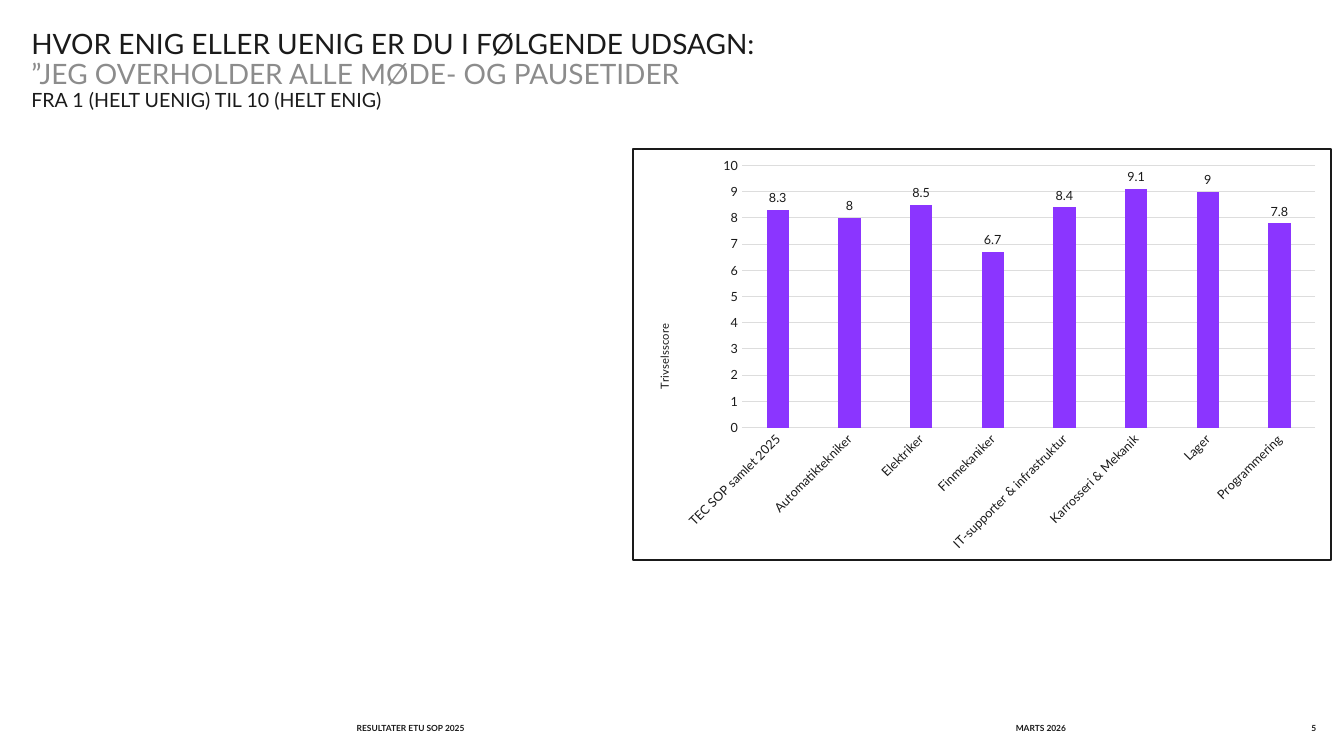
from lxml.etree import fromstring
from pptx import Presentation
from pptx.chart.data import CategoryChartData
from pptx.dml.color import RGBColor
from pptx.enum.chart import XL_CHART_TYPE, XL_LABEL_POSITION, XL_TICK_MARK
from pptx.enum.text import MSO_ANCHOR, MSO_AUTO_SIZE, PP_ALIGN
from pptx.util import Cm, Pt

CHART_NS = "http://schemas.openxmlformats.org/drawingml/2006/chart"
DRAWING_NS = "http://schemas.openxmlformats.org/drawingml/2006/main"
INK, GREY, GRID, PURPLE, WHITE = "1A1A1A", "8C8C8C", "DDDDDD", "8B35FF", "FFFFFF"

HEADING = [
    ("HVOR ENIG ELLER UENIG ER DU I FØLGENDE UDSAGN:", 20, INK),
    ("”JEG OVERHOLDER ALLE MØDE- OG PAUSETIDER", 20, GREY),
    ("FRA 1 (HELT UENIG) TIL 10 (HELT ENIG)", 14, INK),
]
SCORES = {
    "TEC SOP samlet 2025": 8.3,
    "Automatiktekniker": 8,
    "Elektriker": 8.5,
    "Finmekaniker": 6.7,
    "IT-supporter & infrastruktur": 8.4,
    "Karrosseri & Mekanik": 9.1,
    "Lager": 9,
    "Programmering": 7.8,
}
# Text, left, width, alignment
FOOTER = [
    ("RESULTATER ETU SOP 2025", 8.99, 11.2, PP_ALIGN.LEFT),
    ("MARTS 2026", 25.6, 3.78, PP_ALIGN.LEFT),
    ("5", 31.39, 1.78, PP_ALIGN.RIGHT),
]


def colour(code):
    return RGBColor.from_string(code)


def place(element, x, y, size="", inner=""):
    """Give a chart part a manual layout, as shares of the chart."""
    for old in element.xpath("c:layout"):
        element.remove(old)
    layout = fromstring(
        f'<c:layout xmlns:c="{CHART_NS}"><c:manualLayout>{inner}'
        f'<c:xMode val="edge"/><c:yMode val="edge"/>'
        f'<c:x val="{x}"/><c:y val="{y}"/>{size}</c:manualLayout></c:layout>')
    element.insert(len(element.xpath("c:tx")), layout)


class SlideBuilder:
    font = "Lato"

    def __init__(self, slide):
        self.slide = slide

    def style(self, font, size, code=INK, bold=False):
        values = {"name": self.font, "size": Pt(size), "bold": bold}
        for name, value in values.items():
            setattr(font, name, value)
        font.color.rgb = colour(code)

    def frame(self, shape, anchor):
        values = {"margin_left": 0, "margin_top": 0, "margin_right": 0,
                  "margin_bottom": 0, "word_wrap": True,
                  "auto_size": MSO_AUTO_SIZE.NONE, "vertical_anchor": anchor}
        for name, value in values.items():
            setattr(shape.text_frame, name, value)
        return shape.text_frame

    def heading(self, lines, left, top, width, height):
        title = self.slide.shapes.title
        box = {"left": left, "top": top, "width": width, "height": height}
        for name, value in box.items():
            setattr(title, name, Cm(value))
        frame = self.frame(title, MSO_ANCHOR.TOP)
        frame.text = "\n".join(text for text, _, _ in lines)
        for paragraph, (_, size, code) in zip(frame.paragraphs, lines):
            paragraph.alignment = PP_ALIGN.LEFT
            paragraph.line_spacing = 0.9
            paragraph.space_before = Pt(0)
            self.style(paragraph.runs[0].font, size, code)

    def footer(self, text, left, width, alignment):
        box = self.slide.shapes.add_textbox(Cm(left), Cm(18.16), Cm(width), Cm(0.38))
        paragraph = self.frame(box, MSO_ANCHOR.MIDDLE).paragraphs[0]
        paragraph.alignment = alignment
        run = paragraph.add_run()
        run.text = text
        self.style(run.font, 6, bold=True)

    def columns(self, scores, left, top, width, height):
        data = CategoryChartData()
        data.categories = list(scores)
        data.add_series("Series 1", list(scores.values()))
        chart = self.slide.shapes.add_chart(
            XL_CHART_TYPE.COLUMN_CLUSTERED, Cm(left), Cm(top),
            Cm(width), Cm(height), data).chart
        chart.has_title = chart.has_legend = False
        self.style(chart.font, 10)

        # Columns and their labels
        plot = chart.plots[0]
        labels_shown = {"vary_by_categories": False, "gap_width": 219,
                        "overlap": -27, "has_data_labels": True}
        for name, value in labels_shown.items():
            setattr(plot, name, value)
        plot.data_labels.show_value = True
        plot.data_labels.position = XL_LABEL_POSITION.OUTSIDE_END
        self.style(plot.data_labels.font, 9)
        fill = plot.series[0].format.fill
        fill.solid()
        fill.fore_color.rgb = colour(PURPLE)

        # Axes
        groups, score = chart.category_axis, chart.value_axis
        for axis in (groups, score):
            axis.major_tick_mark = axis.minor_tick_mark = XL_TICK_MARK.NONE
            self.style(axis.tick_labels.font, 9)
        scale = {"minimum_scale": 0, "maximum_scale": 10, "major_unit": 1}
        for name, value in scale.items():
            setattr(score, name, value)
        score.format.line.fill.background()
        for line in (groups.format.line, score.major_gridlines.format.line):
            line.color.rgb = colour(GRID)
            line.width = Pt(0.75)
        title = score.axis_title.text_frame
        title.text = "Trivselsscore"
        self.style(title.paragraphs[0].runs[0].font, 8)

        # Turned texts, plot position and chart border
        root = chart.element
        turns = {"//c:catAx/c:txPr/a:bodyPr": -45, "//c:valAx/c:title//a:bodyPr": -90}
        for query, degrees in turns.items():
            body = root.xpath(query)[0]
            body.set("rot", str(degrees * 60000))
            body.set("vert", "horz")
        place(root.xpath("//c:valAx/c:title")[0], 0.03, 0.42)
        place(root.xpath("//c:plotArea")[0], 0.156, 0.04,
              '<c:w val="0.822"/><c:h val="0.638"/>',
              '<c:layoutTarget val="inner"/>')
        root.xpath("c:chart")[0].addnext(fromstring(
            f'<c:spPr xmlns:c="{CHART_NS}" xmlns:a="{DRAWING_NS}">'
            f'<a:solidFill><a:srgbClr val="{WHITE}"/></a:solidFill>'
            f'<a:ln w="{Pt(1.5)}"><a:solidFill><a:srgbClr val="{INK}"/>'
            f'</a:solidFill></a:ln></c:spPr>'))


def main():
    deck = Presentation()
    deck.slide_width, deck.slide_height = Cm(33.87), Cm(19.05)
    builder = SlideBuilder(deck.slides.add_slide(deck.slide_layouts[5]))
    builder.heading(HEADING, 0.79, 0.76, 23.32, 2.97)
    builder.columns(SCORES, 15.93, 3.73, 17.63, 10.41)
    for entry in FOOTER:
        builder.footer(*entry)
    deck.save("out.pptx")


if __name__ == "__main__":
    main()
